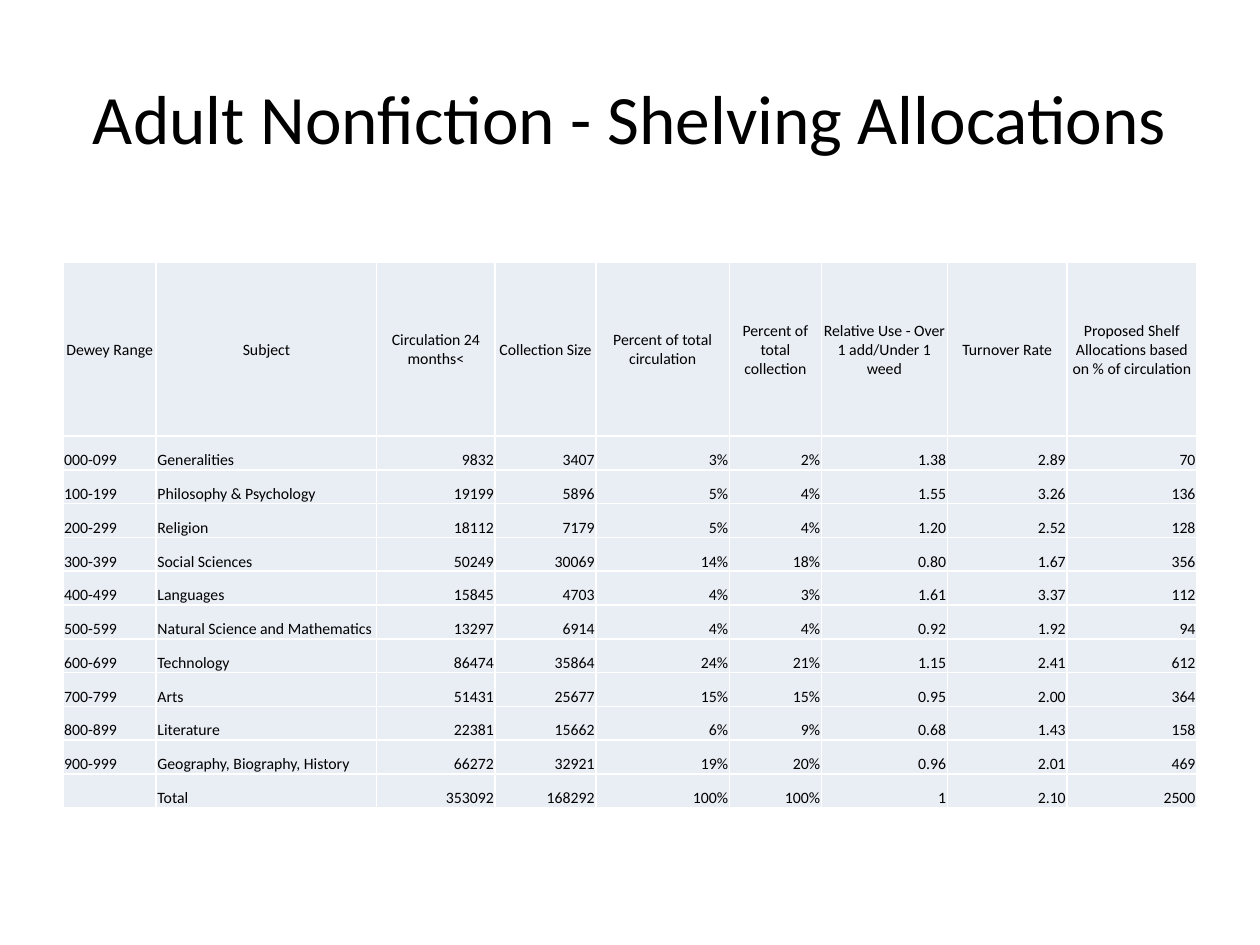
from collections import namedtuple
from dataclasses import dataclass

from lxml import etree
from pptx import Presentation
from pptx import util as u
from pptx.dml.color import RGBColor
from pptx.enum import text
from pptx.oxml.ns import qn

Box = namedtuple("Box", "left top width height")


@dataclass(frozen=True)
class Theme:
    font: str = "Calibri"
    ink: str = "000000"
    cell: str = "E9EDF4"
    rule: str = "FFFFFF"
    title_size: float = 39.6
    table_size: float = 9
    rule_width: float = 1


THEME = Theme()
SLIDE_WIDTH, SLIDE_HEIGHT = u.Inches(10), u.Inches(7.5)
TITLE = "Adult Nonfiction - Shelving Allocations"
COLUMN_WEIGHTS = (0.74, 1.75, 0.94, 0.8, 1.06, 0.73, 1, 0.95, 1.03)
HEADER_SHARE = 0.318
LABEL_COLUMNS = 2
HEADINGS = (
    "Dewey Range", "Subject", "Circulation 24 months<", "Collection Size",
    "Percent of total circulation", "Percent of total collection",
    "Relative Use - Over 1 add/Under 1 weed", "Turnover Rate",
    "Proposed Shelf Allocations based on % of circulation",
)
RECORDS = (
    ("000-099", "Generalities", "9832", "3407", "3%", "2%", "1.38", "2.89", "70"),
    ("100-199", "Philosophy & Psychology", "19199", "5896", "5%", "4%", "1.55", "3.26", "136"),
    ("200-299", "Religion", "18112", "7179", "5%", "4%", "1.20", "2.52", "128"),
    ("300-399", "Social Sciences", "50249", "30069", "14%", "18%", "0.80", "1.67", "356"),
    ("400-499", "Languages", "15845", "4703", "4%", "3%", "1.61", "3.37", "112"),
    ("500-599", "Natural Science and Mathematics", "13297", "6914", "4%", "4%", "0.92", "1.92", "94"),
    ("600-699", "Technology", "86474", "35864", "24%", "21%", "1.15", "2.41", "612"),
    ("700-799", "Arts", "51431", "25677", "15%", "15%", "0.95", "2.00", "364"),
    ("800-899", "Literature", "22381", "15662", "6%", "9%", "0.68", "1.43", "158"),
    ("900-999", "Geography, Biography, History", "66272", "32921", "19%", "20%", "0.96", "2.01", "469"),
    ("", "Total", "353092", "168292", "100%", "100%", "1", "2.10", "2500"),
)


def slide_box(left, top, width, height):
    return Box(int(left * SLIDE_WIDTH), int(top * SLIDE_HEIGHT),
               int(width * SLIDE_WIDTH), int(height * SLIDE_HEIGHT))


def write(para, words, size, align):
    para.alignment = align
    if not words:
        etree.SubElement(para._p, qn("a:endParaRPr"), sz=str(int(size * 100)))
        return
    span = para.add_run()
    span.text = words
    span.font.name = THEME.font
    span.font.size = u.Pt(size)
    span.font.color.rgb = RGBColor.from_string(THEME.ink)


def rule_cell(cell):
    properties = cell._tc.get_or_add_tcPr()
    for position, side in enumerate(("lnL", "lnR", "lnT", "lnB")):
        line = etree.Element(qn(f"a:{side}"), w=str(u.Pt(THEME.rule_width)))
        fill = etree.SubElement(line, qn("a:solidFill"))
        etree.SubElement(fill, qn("a:srgbClr"), val=THEME.rule)
        properties.insert(position, line)


def fill_cell(cell, words, align, anchor):
    cell.margin_left = cell.margin_right = cell.margin_top = u.Inches(0.01)
    cell.margin_bottom = 0
    cell.vertical_anchor = anchor
    cell.fill.solid()
    cell.fill.fore_color.rgb = RGBColor.from_string(THEME.cell)
    rule_cell(cell)
    write(cell.text_frame.paragraphs[0], words, THEME.table_size, align)


def place_title(page, box):
    title = page.shapes.title
    title.left, title.top, title.width, title.height = box
    frame = title.text_frame
    frame.word_wrap = True
    frame.auto_size = text.MSO_AUTO_SIZE.NONE
    frame.vertical_anchor = text.MSO_ANCHOR.MIDDLE
    write(frame.paragraphs[0], TITLE, THEME.title_size, text.PP_ALIGN.CENTER)


def place_table(page, box):
    rows = (HEADINGS,) + RECORDS
    table = page.shapes.add_table(len(rows), len(HEADINGS), *box).table
    table.first_row = table.horz_banding = False
    for column, weight in zip(table.columns, COLUMN_WEIGHTS):
        column.width = int(box.width * weight / sum(COLUMN_WEIGHTS))
    header_height = int(box.height * HEADER_SHARE)
    for row_index, record in enumerate(rows):
        heading = row_index == 0
        table.rows[row_index].height = (
            header_height if heading else (box.height - header_height) // len(RECORDS))
        anchor = text.MSO_ANCHOR.MIDDLE if heading else text.MSO_ANCHOR.BOTTOM
        for column_index, words in enumerate(record):
            if heading:
                align = text.PP_ALIGN.CENTER
            elif column_index < LABEL_COLUMNS:
                align = text.PP_ALIGN.LEFT
            else:
                align = text.PP_ALIGN.RIGHT
            fill_cell(table.cell(row_index, column_index), words, align, anchor)


def main():
    deck = Presentation()
    deck.slide_width, deck.slide_height = SLIDE_WIDTH, SLIDE_HEIGHT
    page = deck.slides.add_slide(deck.slide_layouts.get_by_name("Title Only"))
    place_title(page, slide_box(0.05, 0.04, 0.9, 1 / 6))
    place_table(page, slide_box(0.05, 0.278, 0.9, 0.577))
    deck.save("out.pptx")


if __name__ == "__main__":
    main()
